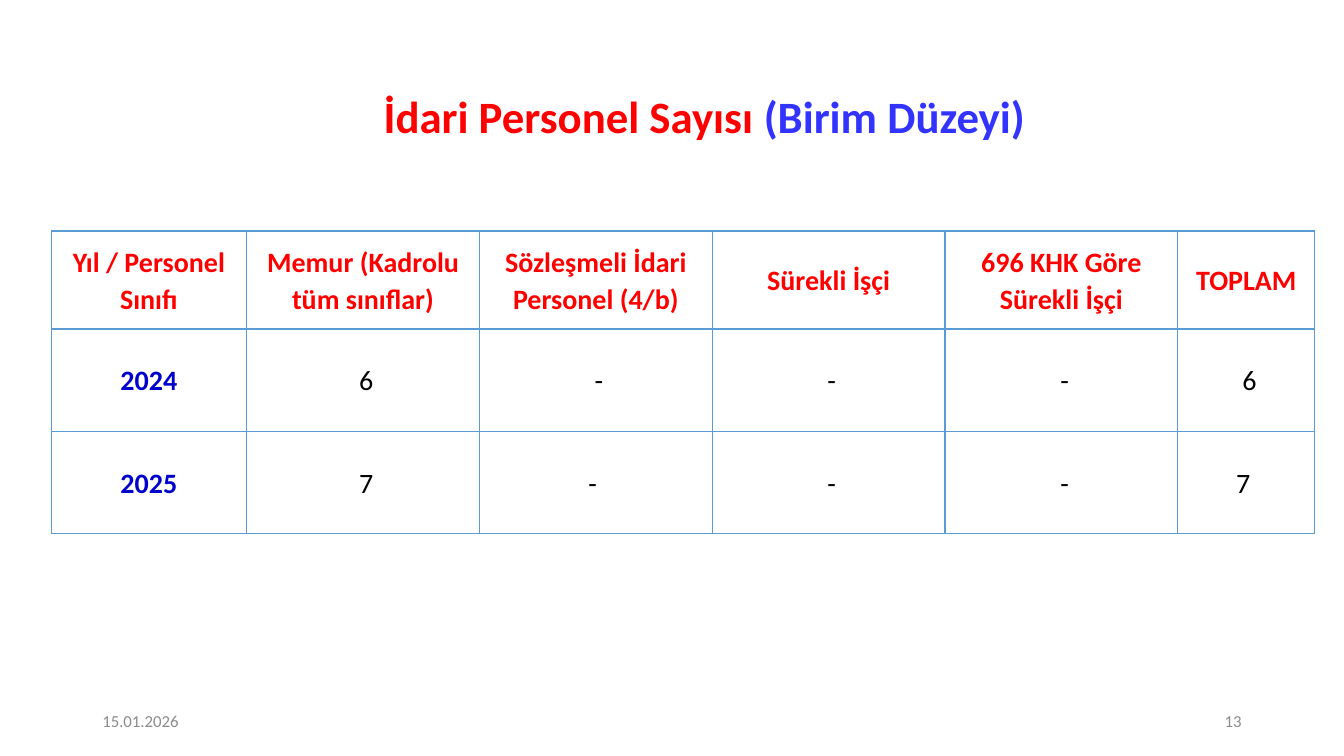
"""Build the slide on administrative staff numbers by year."""
from dataclasses import dataclass

from lxml import etree
from pptx import Presentation
from pptx.dml.color import RGBColor
from pptx.enum.text import MSO_ANCHOR, MSO_AUTO_SIZE, PP_ALIGN
from pptx.oxml.ns import qn
from pptx.slide import Slide
from pptx.table import _Cell
from pptx.text.text import Font
from pptx.util import Pt

MIDDLE = MSO_ANCHOR.MIDDLE
NO_FIT = MSO_AUTO_SIZE.NONE
LEFT, CENTER, RIGHT = PP_ALIGN.LEFT, PP_ALIGN.CENTER, PP_ALIGN.RIGHT

FACE = "Calibri"
HUES = {
    "red": "FF0000",
    "blue": "3333FF",
    "navy": "0000CC",
    "black": "000000",
    "gray": "8C8C8C",
    "line": "5B9BD5",
}
WIDTHS = [139.7, 166.3, 166.3, 166.3, 166.3, 97.9]
HEIGHTS = [70, 73, 73]
ROWS = [
    ["Yıl / Personel Sınıfı", "Memur (Kadrolu tüm sınıflar)",
     "Sözleşmeli İdari Personel (4/b)", "Sürekli İşçi",
     "696 KHK Göre Sürekli İşçi", "TOPLAM"],
    ["2024", " 6", " -", " -", " -", " 6"],
    ["2025", " 7", "- ", " -", " -", "7 "],
]


@dataclass
class Note:
    """A small footer text."""
    text: str
    left: float
    align: PP_ALIGN


@dataclass
class Part:
    """A coloured part of the title."""
    text: str
    hue: str


NOTES = [Note("15.01.2026", 66, LEFT), Note("13", 678, RIGHT)]
PARTS = [Part("İdari Personel Sayısı ", "red"), Part("(Birim Düzeyi)", "blue")]


def style(font: Font, size: float, hue: str, bold: bool = False) -> None:
    """Set face, size, colour and weight."""
    font.name = FACE
    font.size = Pt(size)
    font.bold = bold
    font.color.rgb = RGBColor.from_string(HUES[hue])


def add_title(slide: Slide) -> None:
    """Place and colour the title."""
    title = slide.shapes.title
    title.left, title.top = Pt(100), Pt(60.5)
    title.width, title.height = Pt(806.4), Pt(49)
    frame = title.text_frame
    frame.auto_size = NO_FIT
    frame.vertical_anchor = MIDDLE
    para = frame.paragraphs[0]
    para.alignment = CENTER
    para.line_spacing = 0.9
    for part in PARTS:
        run = para.add_run()
        run.text = part.text
        style(run.font, 32, part.hue, True)


def add_note(slide: Slide, note: Note) -> None:
    """Draw one footer text."""
    box = slide.shapes.add_textbox(Pt(note.left), Pt(500.4), Pt(216), Pt(28.8))
    frame = box.text_frame
    frame.word_wrap = True
    frame.vertical_anchor = MIDDLE
    frame.text = note.text
    para = frame.paragraphs[0]
    para.alignment = note.align
    style(para.runs[0].font, 12, "gray")


def add_edges(cell: _Cell) -> None:
    """Line all four sides of a cell."""
    props = cell._tc.get_or_add_tcPr()
    for spot, side in enumerate(("lnL", "lnR", "lnT", "lnB")):
        edge = etree.Element(qn(f"a:{side}"), w=str(Pt(1)))
        fill = etree.SubElement(edge, qn("a:solidFill"))
        etree.SubElement(fill, qn("a:srgbClr"), val=HUES["line"])
        props.insert(spot, edge)


def fill_cell(cell: _Cell, text: str, hue: str, bold: bool) -> None:
    """Write and format one cell."""
    cell.fill.background()
    cell.vertical_anchor = MIDDLE
    cell.margin_left = cell.margin_right = Pt(0)
    cell.margin_top = cell.margin_bottom = Pt(0)
    cell.text = text
    para = cell.text_frame.paragraphs[0]
    para.alignment = CENTER
    para.line_spacing = 1.07
    style(para.runs[0].font, 20, hue, bold)
    add_edges(cell)


def add_staff(slide: Slide) -> None:
    """Draw the staff table."""
    table = slide.shapes.add_table(
        len(HEIGHTS), len(WIDTHS), Pt(36.5), Pt(165),
        Pt(sum(WIDTHS)), Pt(sum(HEIGHTS))).table
    table.first_row = table.horz_banding = False
    for col, width in zip(table.columns, WIDTHS):
        col.width = Pt(width)
    for row, height in zip(table.rows, HEIGHTS):
        row.height = Pt(height)
    for r, texts in enumerate(ROWS):
        for c, text in enumerate(texts):
            hue = "red" if r == 0 else "navy" if c == 0 else "black"
            fill_cell(table.cell(r, c), text, hue, hue != "black")


def main() -> None:
    """Build and save the slide."""
    deck = Presentation()
    deck.slide_width, deck.slide_height = Pt(960), Pt(540)
    slide = deck.slides.add_slide(deck.slide_layouts.get_by_name("Title Only"))
    add_title(slide)
    add_staff(slide)
    for note in NOTES:
        add_note(slide, note)
    deck.save("out.pptx")


if __name__ == "__main__":
    main()
